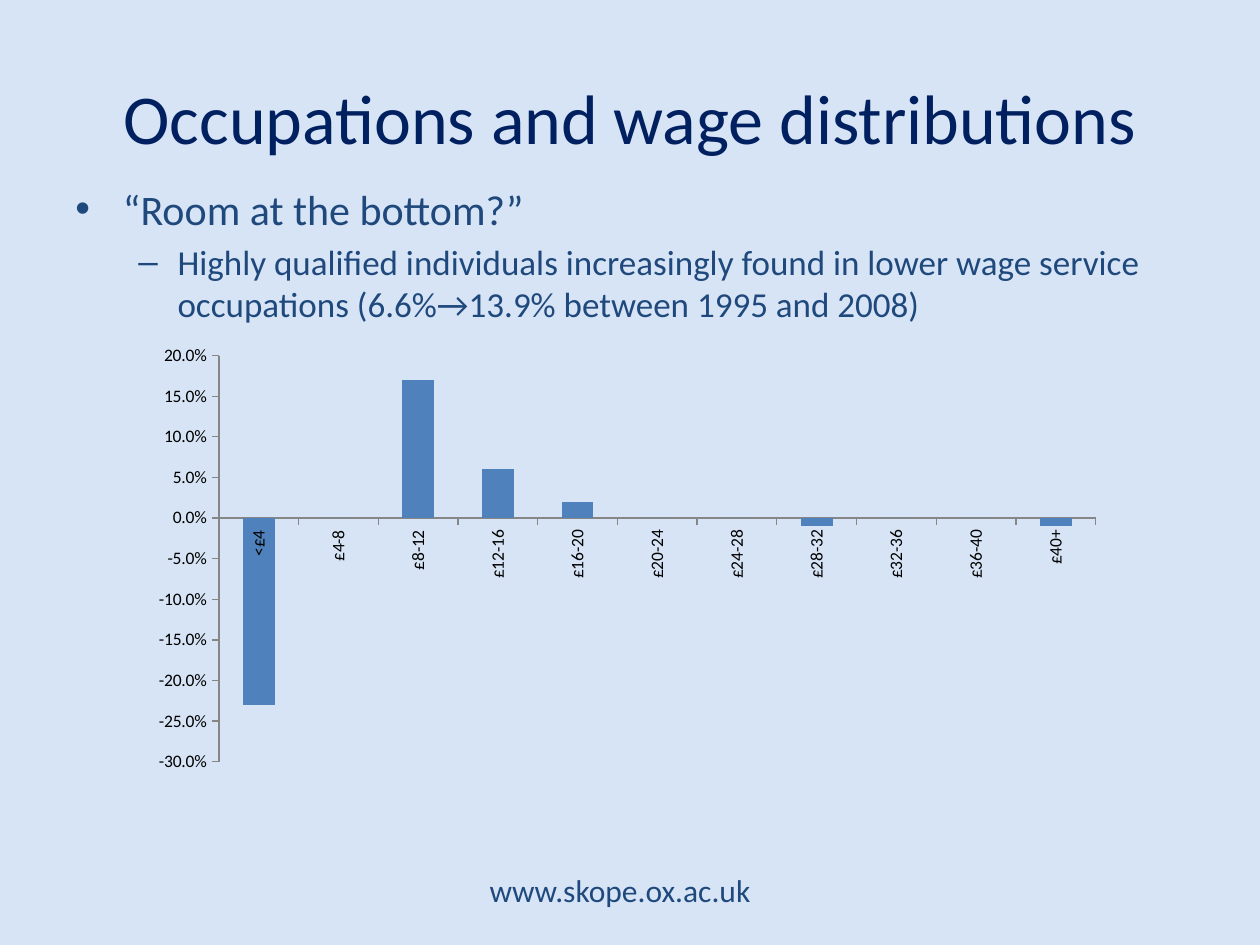
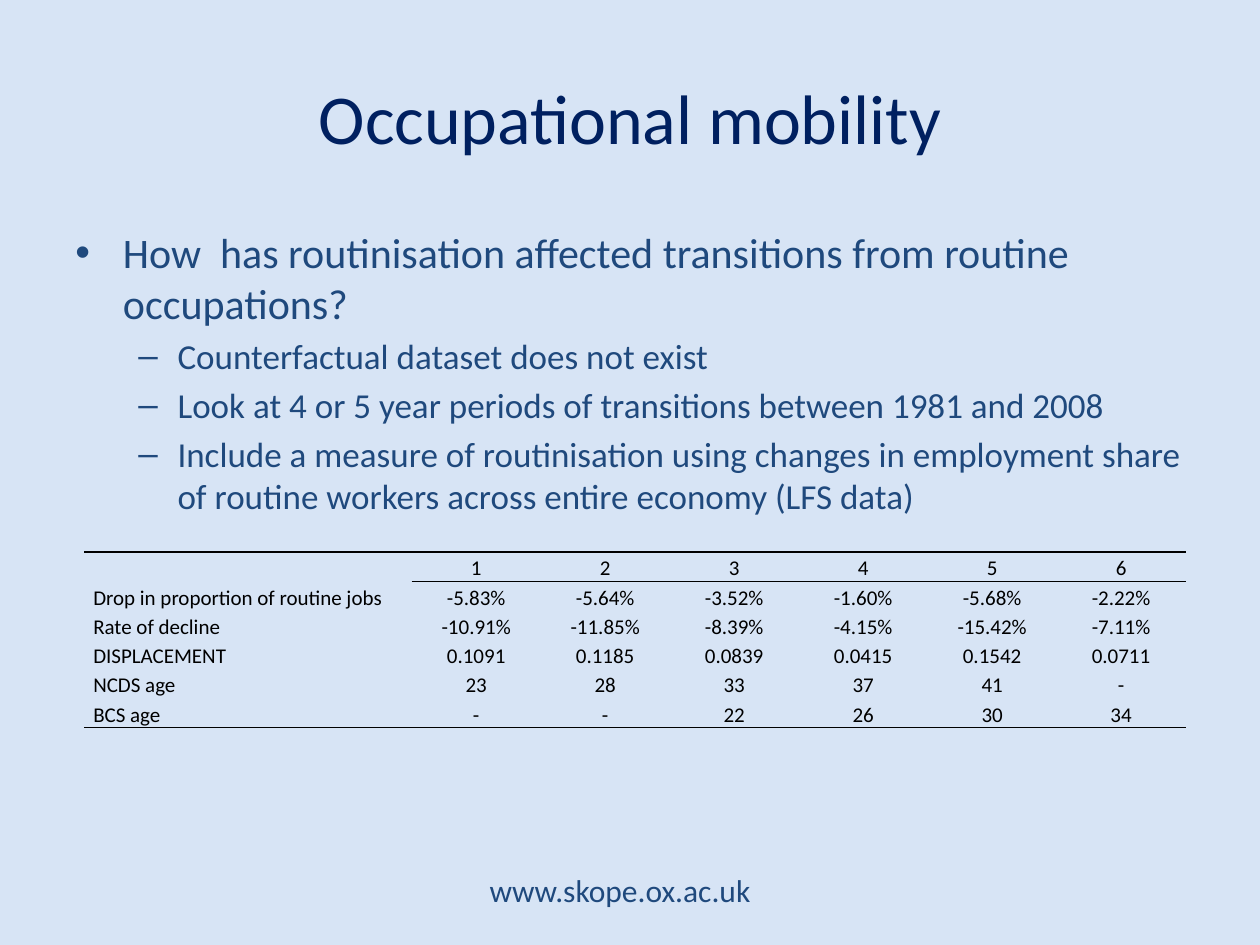
from lxml import etree
from pptx import Presentation
from pptx.chart.data import CategoryChartData
from pptx.dml.color import RGBColor
from pptx.enum.chart import XL_CHART_TYPE, XL_TICK_MARK
from pptx.enum.text import MSO_ANCHOR, PP_ALIGN
from pptx.oxml.ns import qn
from pptx.util import Cm, Pt

CLUSTERED = XL_CHART_TYPE.COLUMN_CLUSTERED
TICK_OUTSIDE, TICK_NONE = XL_TICK_MARK.OUTSIDE, XL_TICK_MARK.NONE
MIDDLE = MSO_ANCHOR.MIDDLE
LEFT, CENTER = PP_ALIGN.LEFT, PP_ALIGN.CENTER

PALE_BLUE = RGBColor(0xD7, 0xE4, 0xF5)
NAVY = RGBColor(0x00, 0x20, 0x60)
SLATE_BLUE = RGBColor(0x1F, 0x49, 0x7D)
COLUMN_BLUE = RGBColor(0x4F, 0x81, 0xBD)
AXIS_GREY = RGBColor(0x86, 0x86, 0x86)
BLACK = RGBColor(0x00, 0x00, 0x00)

FONT = "Calibri"
WEBSITE = "www.skope.ox.ac.uk"
# Per outline level: bullet, text size, left margin, hanging indent
OUTLINE = [
    ("•", 24, Cm(0.96), Cm(0.96)),
    ("–", 20, Cm(2.06), Cm(0.79)),
]

WAGE_CHANGES = {
    "<£4": -0.23, "£4-8": 0, "£8-12": 0.17, "£12-16": 0.06,
    "£16-20": 0.02, "£20-24": 0, "£24-28": 0, "£28-32": -0.01,
    "£32-36": 0, "£36-40": 0, "£40+": -0.01,
}
MOBILITY_ROWS = [
    ["", "1", "2", "3", "4", "5", "6"],
    ["Drop in proportion of routine jobs",
     "-5.83%", "-5.64%", "-3.52%", "-1.60%", "-5.68%", "-2.22%"],
    ["Rate of decline",
     "-10.91%", "-11.85%", "-8.39%", "-4.15%", "-15.42%", "-7.11%"],
    ["DISPLACEMENT",
     "0.1091", "0.1185", "0.0839", "0.0415", "0.1542", "0.0711"],
    ["NCDS age", "23", "28", "33", "37", "41", "-"],
    ["BCS age", "-", "-", "22", "26", "30", "34"],
]


def style_font(font, size, color):
    font.name = FONT
    font.size = Pt(size)
    font.color.rgb = color


def set_borders(cell, ruled_sides):
    """Rule the given sides (T, B) in black and clear the others."""
    properties = cell._tc.get_or_add_tcPr()
    for side in "LRTB":
        line = etree.SubElement(properties, qn(f"a:ln{side}"), w=str(Pt(1)))
        if side in ruled_sides:
            fill = etree.SubElement(line, qn("a:solidFill"))
            etree.SubElement(fill, qn("a:srgbClr"), val=str(BLACK))
        else:
            etree.SubElement(line, qn("a:noFill"))


def place_plot(chart, **fractions):
    """Fix the inner plot area as fractions (x, y, w, h) of the chart."""
    plot_area = chart._chartSpace.chart.plotArea
    for old_layout in plot_area.findall(qn("c:layout")):
        plot_area.remove(old_layout)
    layout = etree.Element(qn("c:layout"))
    plot_area.insert(0, layout)
    manual = etree.SubElement(layout, qn("c:manualLayout"))
    settings = {"layoutTarget": "inner", "xMode": "edge", "yMode": "edge"}
    for tag, value in {**settings, **fractions}.items():
        etree.SubElement(manual, qn(f"c:{tag}"), val=str(value))


class Deck:
    def __init__(self):
        self.presentation = Presentation()
        self.presentation.slide_width = Cm(25.4)
        self.presentation.slide_height = Cm(19.05)
        background = self.presentation.slide_master.background.fill
        background.solid()
        background.fore_color.rgb = PALE_BLUE
        self.slide = None

    def start_slide(self, heading):
        layout = self.presentation.slide_layouts.get_by_name("Title Only")
        self.slide = self.presentation.slides.add_slide(layout)
        self.add_footer()
        title = self.slide.shapes.title
        title.left, title.top = Cm(1.27), Cm(0.76)
        title.width, title.height = Cm(22.86), Cm(3.18)
        title.text_frame.text = heading
        title.text_frame.vertical_anchor = MIDDLE
        paragraph = title.text_frame.paragraphs[0]
        paragraph.alignment = CENTER
        style_font(paragraph.font, 40, NAVY)

    def add_text_frame(self, left, top, width, height):
        box = self.slide.shapes.add_textbox(left, top, width, height)
        box.text_frame.word_wrap = True
        return box.text_frame

    def add_footer(self):
        frame = self.add_text_frame(Cm(8.13), Cm(17.44), Cm(8.74), Cm(1.02))
        frame.vertical_anchor = MIDDLE
        paragraph = frame.paragraphs[0]
        paragraph.text = WEBSITE
        paragraph.alignment = CENTER
        style_font(paragraph.font, 18, SLATE_BLUE)

    def add_outline(self, top, question, points):
        frame = self.add_text_frame(Cm(1.27), top, Cm(22.86), Cm(12.57))
        entries = [(0, question)] + [(1, point) for point in points]
        for index, (level, text) in enumerate(entries):
            paragraph = frame.add_paragraph() if index else frame.paragraphs[0]
            bullet, size, margin, hanging = OUTLINE[level]
            paragraph.text = text
            paragraph.level = level
            if index:
                paragraph.space_before = Pt(size * 0.2)
            properties = paragraph._p.get_or_add_pPr()
            properties.set("marL", str(margin))
            properties.set("indent", str(-hanging))
            etree.SubElement(properties, qn("a:buFont"), typeface="Arial")
            etree.SubElement(properties, qn("a:buChar"), char=bullet)
            style_font(paragraph.font, size, SLATE_BLUE)

    def add_column_chart(self, left, top, width, height, values):
        data = CategoryChartData(number_format="0.0%")
        data.categories = list(values)
        data.add_series("Series 1", list(values.values()))
        chart = self.slide.shapes.add_chart(
            CLUSTERED, left, top, width, height, data).chart
        chart.has_legend = False
        chart.has_title = False
        style_font(chart.font, 10, BLACK)
        plot = chart.plots[0]
        plot.gap_width = 150
        plot.vary_by_categories = False
        series = plot.series[0]
        series.invert_if_negative = False
        series.format.fill.solid()
        series.format.fill.fore_color.rgb = COLUMN_BLUE
        for axis in (chart.category_axis, chart.value_axis):
            axis.has_major_gridlines = False
            axis.major_tick_mark = TICK_OUTSIDE
            axis.minor_tick_mark = TICK_NONE
            axis.format.line.color.rgb = AXIS_GREY
            style_font(axis.tick_labels.font, 10, BLACK)
        scale = chart.value_axis
        scale.minimum_scale, scale.maximum_scale = -0.3, 0.2
        scale.major_unit = 0.05
        scale.tick_labels.number_format = "0.0%"
        scale.tick_labels.number_format_is_linked = False
        label_body = chart.category_axis._element.find(
            f"{qn('c:txPr')}/{qn('a:bodyPr')}")
        label_body.set("rot", "-5400000")
        label_body.set("vert", "horz")
        place_plot(chart, x=0.1, y=0.02, w=0.9, h=0.91)

    def add_ruled_table(self, left, top, column_widths, row_height, rows):
        table = self.slide.shapes.add_table(
            len(rows), len(column_widths), left, top,
            sum(column_widths), row_height * len(rows)).table
        table.first_row = False
        table.horz_banding = False
        for column, width in zip(table.columns, column_widths):
            column.width = width
        for row_index, texts in enumerate(rows):
            table.rows[row_index].height = row_height
            for column_index, text in enumerate(texts):
                sides = ""
                if row_index == 0:
                    sides = "TB" if column_index else "T"
                elif row_index == 1 and column_index:
                    sides = "T"
                elif row_index == len(rows) - 1:
                    sides = "B"
                cell = table.cell(row_index, column_index)
                self.fill_cell(cell, text, CENTER if column_index else LEFT)
                set_borders(cell, sides)
                cell.fill.background()

    def fill_cell(self, cell, text, alignment):
        cell.text = text
        cell.vertical_anchor = MIDDLE
        cell.margin_left = cell.margin_right = Cm(0.18)
        cell.margin_top = cell.margin_bottom = 0
        paragraph = cell.text_frame.paragraphs[0]
        paragraph.alignment = alignment
        paragraph.line_spacing = 1.15
        paragraph.space_after = Pt(6)
        style_font(paragraph.font, 12, BLACK)


def main():
    deck = Deck()

    deck.start_slide("Occupations and wage distributions")
    deck.add_outline(Cm(3.57), "“Room at the bottom?”", [
        "Highly qualified individuals increasingly found in lower wage "
        "service occupations (6.6%→13.9% between 1995 and 2008)",
    ])
    deck.add_column_chart(
        Cm(2.45), Cm(6.97), Cm(19.65), Cm(9.02), WAGE_CHANGES)

    deck.start_slide("Occupational mobility")
    deck.add_outline(
        Cm(4.45),
        "How  has routinisation affected transitions from routine occupations?",
        [
            "Counterfactual dataset does not exist",
            "Look at 4 or 5 year periods of transitions between 1981 and 2008",
            "Include a measure of routinisation using changes in employment "
            "share of routine workers across entire economy (LFS data)",
        ])
    deck.add_ruled_table(
        Cm(1.7), Cm(11.13), [Cm(6.6)] + [Cm(2.6)] * 6, Cm(0.59), MOBILITY_ROWS)

    deck.presentation.save("out.pptx")


if __name__ == "__main__":
    main()
